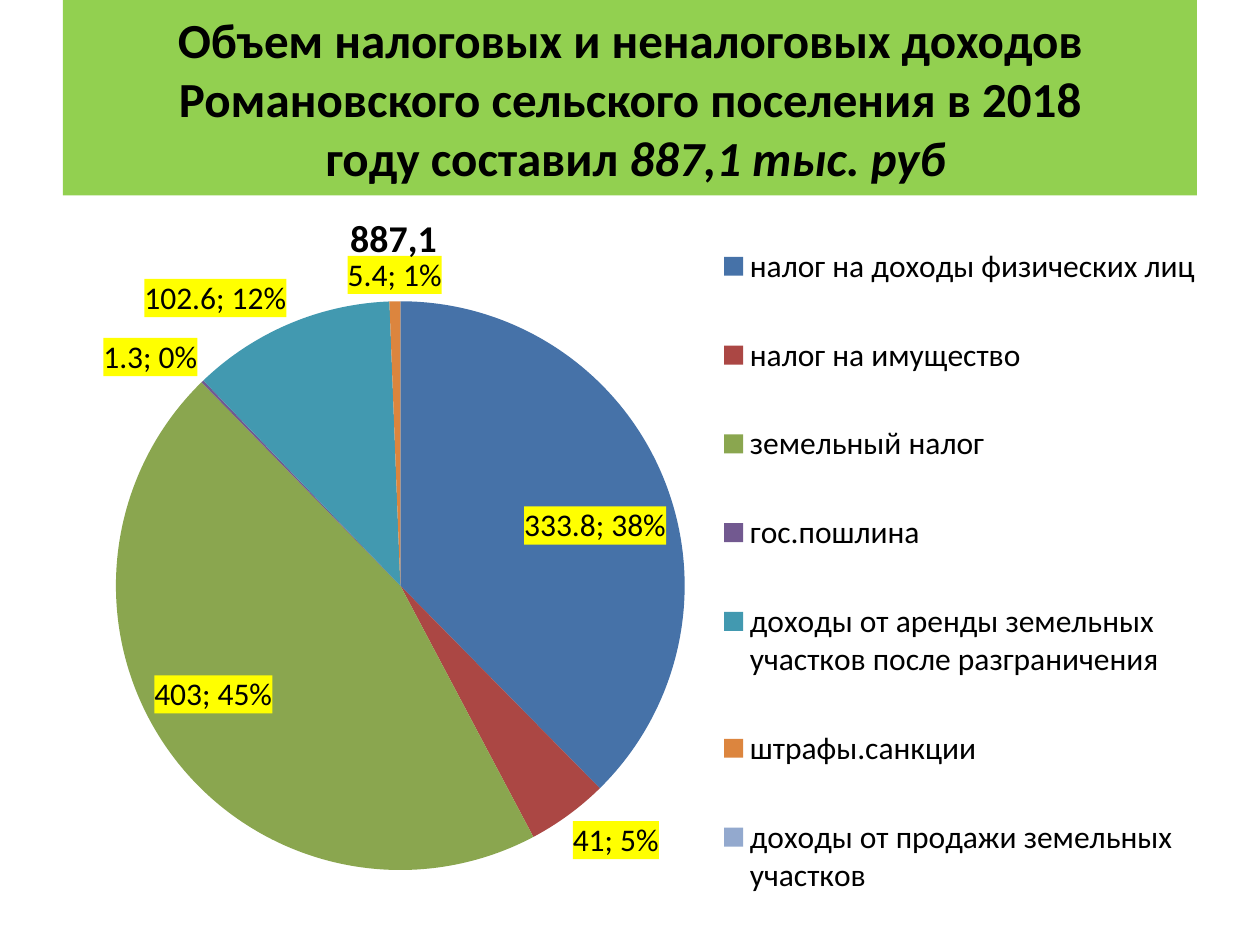
from typing import NamedTuple

from lxml.etree import SubElement
from pptx import Presentation
from pptx.chart.data import CategoryChartData
from pptx.dml.color import RGBColor
from pptx.enum.chart import XL_CHART_TYPE, XL_LABEL_POSITION, XL_LEGEND_POSITION
from pptx.enum.shapes import MSO_SHAPE
from pptx.enum.text import MSO_ANCHOR, PP_ALIGN
from pptx.oxml import parse_xml
from pptx.oxml.ns import nsdecls, qn
from pptx.util import Inches, Pt


class Slice(NamedTuple):
    name: str
    value: float
    color: str


SLICES = [
    Slice("налог на доходы физических лиц", 333.8, "4672A8"),
    Slice("налог на имущество", 41, "AB4744"),
    Slice("земельный налог", 403, "8AA64F"),
    Slice("гос.пошлина", 1.3, "725990"),
    Slice("доходы от аренды земельных участков после разграничения", 102.6, "4299B0"),
    Slice("штрафы.санкции", 5.4, "DC853E"),
    Slice("доходы от продажи земельных участков", 0, "93A9CE"),
]
TOTAL = "887,1"
FONT = "Calibri"


def paint(fill, color: str) -> None:
    fill.solid()
    fill.fore_color.rgb = RGBColor.from_string(color)


def style(font, size: float, bold: bool = False, italic: bool = False) -> None:
    font.name = FONT
    font.size = Pt(size)
    font.bold = bold
    font.italic = italic
    paint(font.fill, "000000")


def place(parent, after: str | None, inner: bool = False, **box: float) -> None:
    for old in parent.findall(qn("c:layout")):
        parent.remove(old)
    layout = parse_xml(f"<c:layout {nsdecls('c')}/>")
    manual = SubElement(layout, qn("c:manualLayout"))
    if inner:
        SubElement(manual, qn("c:layoutTarget")).set("val", "inner")
    for key in ("xMode", "yMode"):
        SubElement(manual, qn(f"c:{key}")).set("val", "edge")
    for key, value in box.items():
        SubElement(manual, qn(f"c:{key}")).set("val", str(value))
    if after:
        parent.find(qn(after)).addnext(layout)
    else:
        parent.insert(0, layout)


def add_title(slide) -> None:
    box = slide.shapes.add_shape(
        MSO_SHAPE.RECTANGLE, Inches(0.5), 0, Inches(9), Inches(1.55)
    )
    box.shadow.inherit = False
    paint(box.fill, "92D050")
    box.line.fill.background()
    frame = box.text_frame
    frame.word_wrap = True
    frame.vertical_anchor = MSO_ANCHOR.MIDDLE
    para = frame.paragraphs[0]
    para.text = (
        "Объем налоговых и неналоговых доходов "
        "Романовского сельского поселения в 2018\v году составил "
    )
    para.alignment = PP_ALIGN.CENTER
    for run in para.runs:
        style(run.font, 28, bold=True)
    total = para.add_run()
    total.text = f"{TOTAL} тыс. руб"
    style(total.font, 28, bold=True, italic=True)


def add_labels(series) -> None:
    labels = series.data_labels
    style(labels.font, 18)
    labels.show_value = True
    labels.show_percentage = True
    labels.position = XL_LABEL_POSITION.BEST_FIT
    root = labels._element
    root.find(qn("c:txPr")).addprevious(parse_xml(
        f"<c:spPr {nsdecls('c', 'a')}><a:solidFill>"
        '<a:srgbClr val="FFFF00"/></a:solidFill></c:spPr>'
    ))
    split = parse_xml(f"<c:separator {nsdecls('c')}>; </c:separator>")
    last = root.find(qn("c:showBubbleSize"))
    if last is None:
        last = root.find(qn("c:showPercent"))
    last.addnext(split)
    for index, part in enumerate(SLICES):
        if not part.value:
            root.insert(0, parse_xml(
                f'<c:dLbl {nsdecls("c")}><c:idx val="{index}"/>'
                '<c:delete val="1"/></c:dLbl>'
            ))


def add_pie(slide) -> None:
    data = CategoryChartData()
    data.categories = [part.name for part in SLICES]
    data.add_series(TOTAL, [part.value for part in SLICES])
    chart = slide.shapes.add_chart(
        XL_CHART_TYPE.PIE, Inches(0.55), Inches(1.56), Inches(9.06), Inches(5.94), data
    ).chart
    style(chart.font, 18)
    chart.has_title = True
    para = chart.chart_title.text_frame.paragraphs[0]
    para.text = TOTAL
    style(para.runs[0].font, 21.6, bold=True)
    place(chart.chart_title._element, "c:tx", x=0.24, y=0.01)

    chart.has_legend = True
    legend = chart.legend
    legend.position = XL_LEGEND_POSITION.RIGHT
    legend.include_in_layout = False
    style(legend.font, 18)
    place(legend._element, "c:legendPos", x=0.56, y=0, w=0.44, h=1)

    plot = chart.plots[0]
    plot.vary_by_categories = True
    place(plot._element.getparent(), None, True, x=0.02, y=0.14, w=0.54, h=0.76)
    series = plot.series[0]
    for index, part in enumerate(SLICES):
        paint(series.points[index].format.fill, part.color)
    add_labels(series)


def main() -> None:
    deck = Presentation()
    deck.slide_width = Inches(10)
    deck.slide_height = Inches(7.5)
    slide = deck.slides.add_slide(deck.slide_layouts[6])
    add_title(slide)
    add_pie(slide)
    deck.save("out.pptx")


if __name__ == "__main__":
    main()
